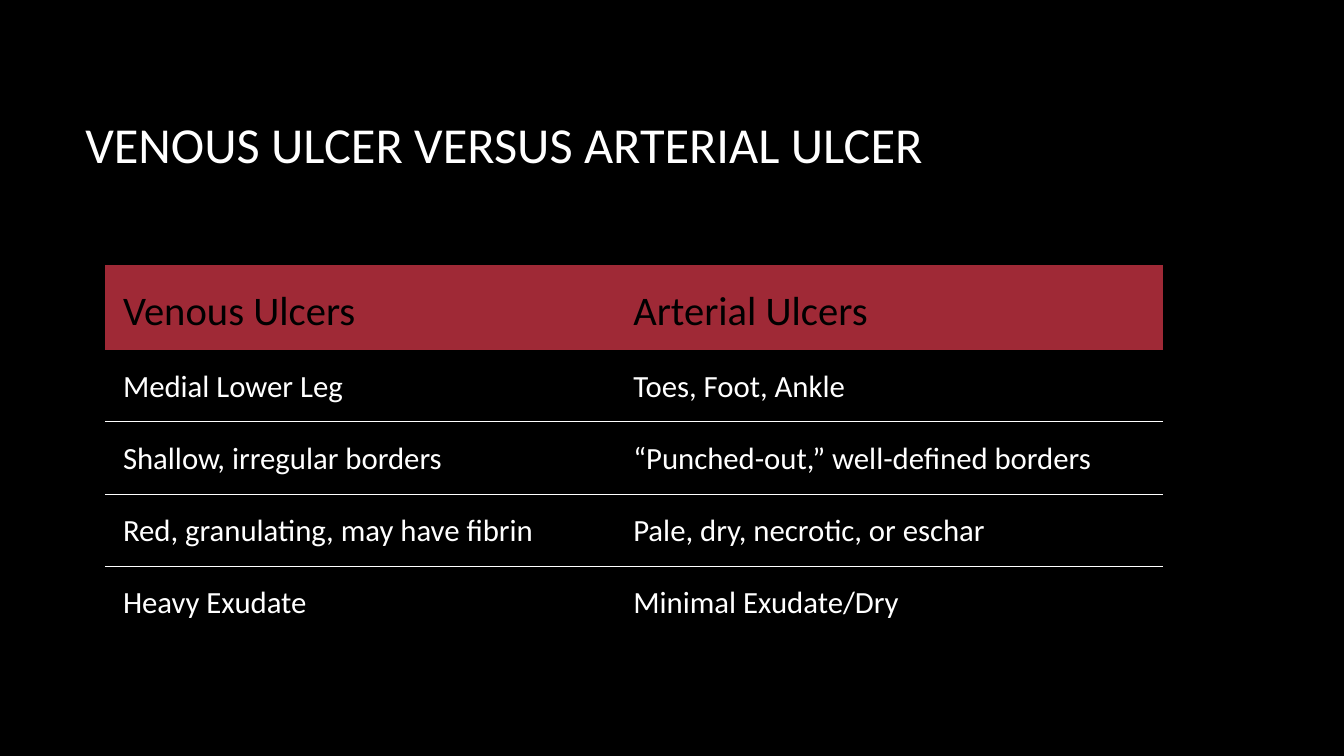
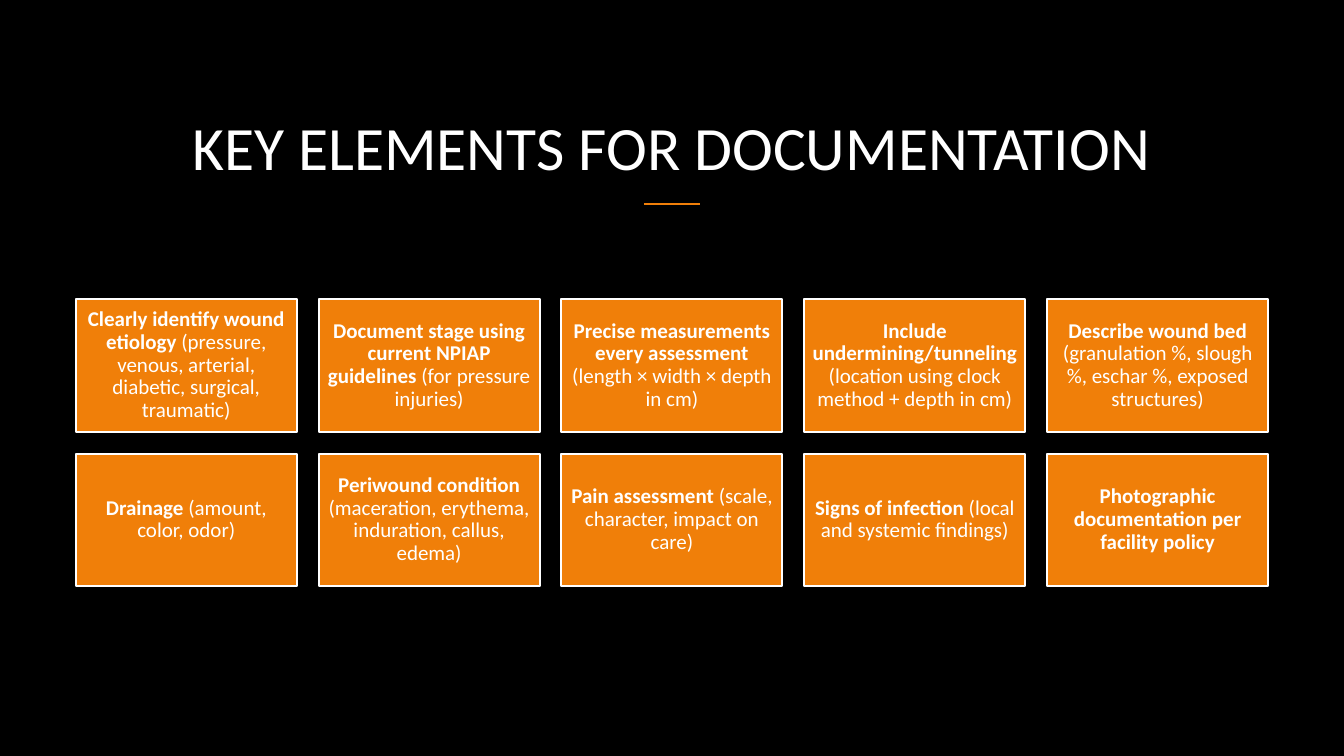
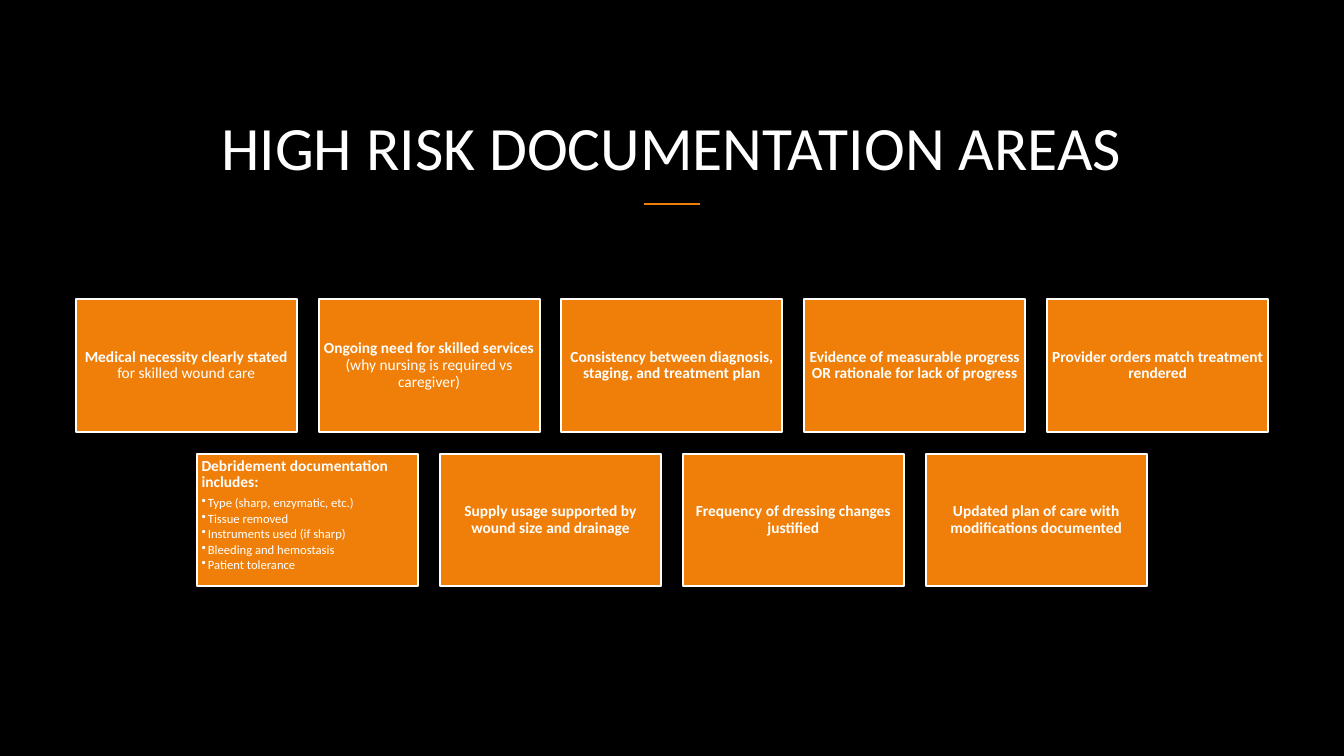
from lxml import etree
from pptx import Presentation
from pptx import util as u
from pptx.dml.color import RGBColor
from pptx.enum import shapes, text
from pptx.oxml.ns import qn

WIDE, HIGH = 33.87, 19.05
FONT = "Calibri"
HUES = {"back": "000000", "text": "FFFFFF", "card": "F07F09", "head": "9F2936"}
LEFT, MID = text.PP_ALIGN.LEFT, text.PP_ALIGN.CENTER
TOP, BASE = text.MSO_ANCHOR.TOP, text.MSO_ANCHOR.BOTTOM
CORE = text.MSO_ANCHOR.MIDDLE


def hue(name):
    return RGBColor.from_string(HUES[name])


class Deck:
    """Hold the shared style and the current slide."""

    def __init__(self):
        self.prs = Presentation()
        self.prs.slide_width = u.Cm(WIDE)
        self.prs.slide_height = u.Cm(HIGH)

    def page(self):
        self.slide = self.prs.slides.add_slide(self.prs.slide_layouts[6])
        fill = self.slide.background.fill
        fill.solid()
        fill.fore_color.rgb = hue("back")

    def style(self, par, size, color="text", align=LEFT):
        par.alignment = align
        par.font.name = FONT
        par.font.size = u.Pt(size)
        par.font.color.rgb = hue(color)

    def title(self, words, box, size, align, anchor):
        frame = self.slide.shapes.add_textbox(*map(u.Cm, box)).text_frame
        frame.word_wrap = True
        frame.vertical_anchor = anchor
        par = frame.paragraphs[0]
        par.text = words
        self.style(par, size, align=align)
        par.line_spacing = 0.9

    def rule(self, y, width):
        x = (WIDE - width) / 2
        line = self.slide.shapes.add_connector(
            shapes.MSO_CONNECTOR.STRAIGHT,
            u.Cm(x), u.Cm(y), u.Cm(x + width), u.Cm(y))
        line.line.color.rgb = hue("card")
        line.line.width = u.Pt(1.5)
        etree.SubElement(line._element.spPr, qn("a:effectLst"))

    def header(self, words):
        self.title(words, (1.9, 1.48, 30.06, 3.28), 44, MID, BASE)
        self.rule(5.13, 1.42)

    def card(self, box, item, size, pad):
        lead, rest, *points = item
        shape = self.slide.shapes.add_shape(
            shapes.MSO_SHAPE.RECTANGLE, *map(u.Cm, box))
        shape.shadow.inherit = False
        shape.fill.solid()
        shape.fill.fore_color.rgb = hue("card")
        shape.line.color.rgb = hue("text")
        shape.line.width = u.Pt(1.5)
        frame = shape.text_frame
        frame.word_wrap = True
        frame.vertical_anchor = TOP if points else CORE
        frame.margin_left = frame.margin_right = u.Cm(pad)
        frame.margin_top = frame.margin_bottom = u.Cm(pad)
        par = frame.paragraphs[0]
        for words, bold in ((lead, True), (rest, False)):
            if words:
                run = par.add_run()
                run.text = words
                run.font.bold = bold
        self.style(par, size, align=LEFT if points else MID)
        par.line_spacing = 0.9
        if points:
            par.space_after = u.Pt(3.9)
        for point in points:
            self.point(frame.add_paragraph(), point)

    def point(self, par, words):
        par.text = words
        props = par._p.get_or_add_pPr()
        props.set("marL", str(u.Cm(0.16)))
        props.set("indent", str(-u.Cm(0.16)))
        etree.SubElement(props, qn("a:buChar"), char="•")
        self.style(par, 9)
        par.line_spacing = 0.9
        par.space_after = u.Pt(1.3)

    def cards(self, rows, size, pad):
        wide, high, gap = 5.57, 3.34, 0.55
        for r, row in enumerate(rows):
            left = (WIDE - len(row) * (wide + gap) + gap) / 2
            for c, item in enumerate(row):
                box = (left + c * (wide + gap), 7.54 + r * (high + gap),
                       wide, high)
                self.card(box, item, size, pad)

    def edges(self, cell, top, base):
        props = cell._tc.get_or_add_tcPr()
        for side, shown in zip("LRTB", (False, False, top, base)):
            line = etree.SubElement(props, qn("a:ln" + side), w=str(u.Pt(0.75)))
            if shown:
                fill = etree.SubElement(line, qn("a:solidFill"))
                etree.SubElement(fill, qn("a:srgbClr"), val=HUES["text"])
            else:
                etree.SubElement(line, qn("a:noFill"))

    def table(self, rows, place, cols, highs):
        grid = self.slide.shapes.add_table(
            len(rows), len(cols), *map(u.Cm, place),
            u.Cm(sum(cols)), u.Cm(sum(highs))).table
        grid.first_row = grid.horz_banding = False
        for col, wide in zip(grid.columns, cols):
            col.width = u.Cm(wide)
        for r, row in enumerate(rows):
            grid.rows[r].height = u.Cm(highs[r])
            for c, words in enumerate(row):
                self.cell(grid.cell(r, c), words, r == 0,
                          r > 1, 0 < r < len(rows) - 1)

    def cell(self, cell, words, head, top, base):
        self.edges(cell, top, base)
        cell.fill.solid()
        cell.fill.fore_color.rgb = hue("head" if head else "back")
        cell.margin_left = cell.margin_right = cell.margin_top = u.Cm(0.46)
        cell.margin_bottom = u.Cm(0.23)
        cell.vertical_anchor = CORE if head else TOP
        par = cell.text_frame.paragraphs[0]
        par.text = words
        self.style(par, 29 if head else 22, "back" if head else "text")


ULCERS = [
    ("Venous Ulcers", "Arterial Ulcers"),
    ("Medial Lower Leg", "Toes, Foot, Ankle"),
    ("Shallow, irregular borders", "“Punched-out,” well-defined borders"),
    ("Red, granulating, may have fibrin", "Pale, dry, necrotic, or eschar"),
    ("Heavy Exudate", "Minimal Exudate/Dry"),
]
KEYS = [
    [("Clearly identify wound etiology",
      " (pressure, venous, arterial, diabetic, surgical, traumatic)"),
     ("Document stage using current NPIAP guidelines",
      " (for pressure injuries)"),
     ("Precise measurements every assessment",
      " (length × width × depth in cm)"),
     ("Include undermining/tunneling",
      " (location using clock method + depth in cm)"),
     ("Describe wound bed",
      " (granulation %, slough %, eschar %, exposed structures)")],
    [("Drainage", " (amount, color, odor)"),
     ("Periwound condition",
      " (maceration, erythema, induration, callus, edema)"),
     ("Pain assessment", " (scale, character, impact on care)"),
     ("Signs of infection", " (local and systemic findings)"),
     ("Photographic documentation per facility policy", "")],
]
RISKS = [
    [("Medical necessity clearly stated", " for skilled wound care"),
     ("Ongoing need for skilled services",
      " (why nursing is required vs caregiver)"),
     ("Consistency between diagnosis, staging, and treatment plan", ""),
     ("Evidence of measurable progress OR rationale for lack of progress", ""),
     ("Provider orders match treatment rendered", "")],
    [("Debridement documentation includes:", "",
      "Type (sharp, enzymatic, etc.)", "Tissue removed",
      "Instruments used (if sharp)", "Bleeding and hemostasis",
      "Patient tolerance"),
     ("Supply usage supported by wound size and drainage", ""),
     ("Frequency of dressing changes justified", ""),
     ("Updated plan of care with modifications documented", "")],
]


def main():
    deck = Deck()
    deck.page()
    deck.title("VENOUS ULCER VERSUS ARTERIAL ULCER",
               (1.9, 1.7, 28.14, 4.04), 36, LEFT, CORE)
    deck.table(ULCERS, (2.64, 6.68), (12.86, 13.8), [2.13] + [1.82] * 4)
    deck.page()
    deck.header("KEY ELEMENTS FOR DOCUMENTATION")
    deck.cards(KEYS, 15, 0.15)
    deck.page()
    deck.header("HIGH RISK DOCUMENTATION AREAS")
    deck.cards(RISKS, 11, 0.11)
    deck.prs.save("out.pptx")


if __name__ == "__main__":
    main()
